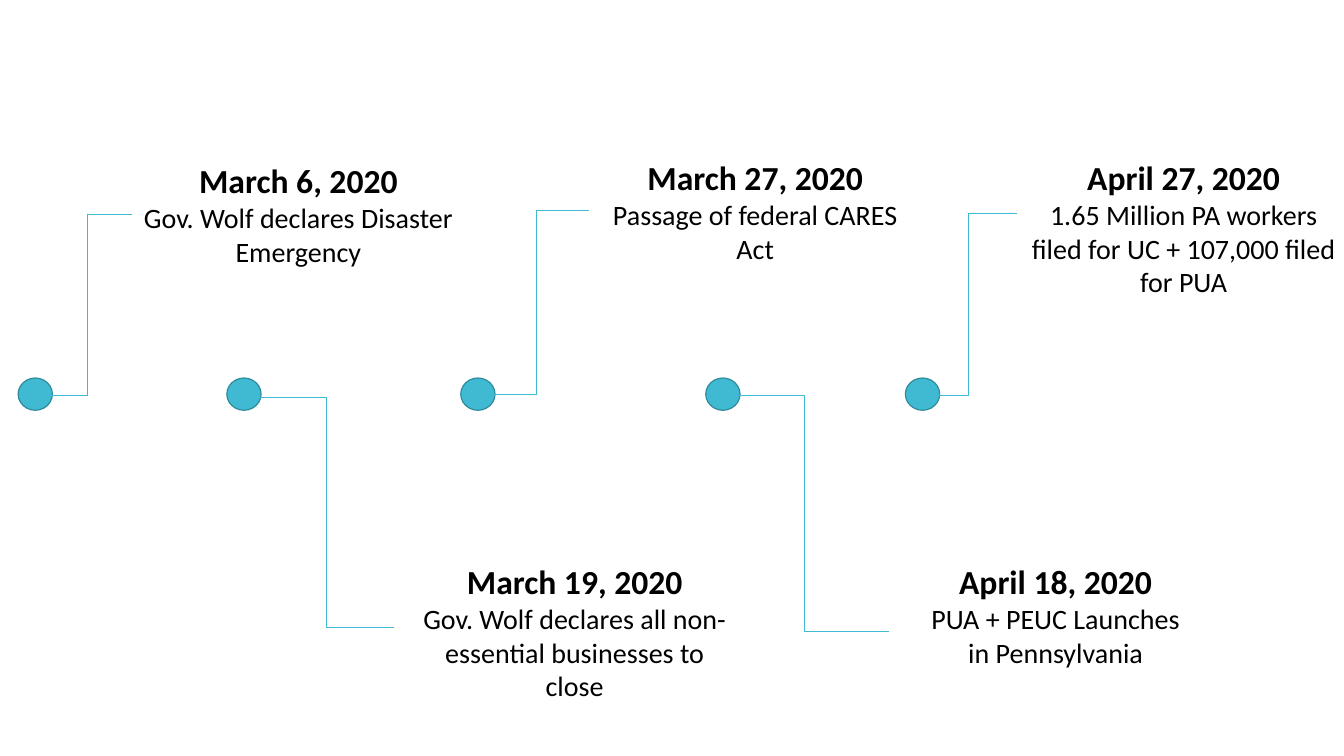
from dataclasses import dataclass

from lxml.etree import SubElement
from pptx import Presentation
from pptx.dml.color import RGBColor
from pptx.enum.shapes import MSO_CONNECTOR, MSO_SHAPE
from pptx.enum.text import MSO_AUTO_SIZE, PP_ALIGN
from pptx.oxml.ns import qn
from pptx.slide import Slide
from pptx.text.text import TextFrame
from pptx.util import Emu, Pt


@dataclass(frozen=True)
class Theme:
    font: str = "Calibri"
    ink: RGBColor = RGBColor(0x00, 0x00, 0x00)
    teal: RGBColor = RGBColor(0x40, 0xBA, 0xD2)
    edge: RGBColor = RGBColor(0x2F, 0x8A, 0x9B)
    date: float = 24
    body: float = 20
    rim: float = 0.85
    rule: float = 0.75


@dataclass(frozen=True)
class Event:
    date: str
    lines: tuple[str, ...]
    box: tuple[int, int, int]  # left, top, height
    dot: int  # left
    start: tuple[int, int]  # line, at the text
    end: tuple[int, int]  # line, at the dot


THEME = Theme()
UNIT = 9144  # EMU in one px, 100 px to the inch
WIDE, HIGH = 1333, 750
BOX_W = 330
DOT_Y, DOT_W, DOT_H = 375, 34, 32

EVENTS = [
    Event("March 6, 2020", ("Gov. Wolf declares Disaster Emergency",),
          (131, 154, 118), 18, (131, 213), (42, 392)),
    Event("March 19, 2020",
          ("Gov. Wolf declares all non-essential businesses to close",),
          (405, 552, 151), 225, (391, 623), (256, 394)),
    Event("March 27, 2020", ("Passage of federal CARES Act",),
          (584, 151, 118), 457, (584, 209), (480, 391)),
    Event("April 18, 2020", ("PUA + PEUC Launches", "in Pennsylvania"),
          (882, 552, 118), 700, (882, 627), (713, 392)),
    Event("April 27, 2020",
          ("1.65 Million PA workers filed for UC + 107,000 filed for PUA",),
          (1009, 151, 151), 898, (1009, 212), (912, 392)),
]


def px(*sizes: int) -> list[Emu]:
    return [Emu(size * UNIT) for size in sizes]


def write(frame: TextFrame, text: str, *, size: float, bold: bool = False,
          first: bool = False) -> None:
    para = frame.paragraphs[0] if first else frame.add_paragraph()
    para.alignment = PP_ALIGN.CENTER
    run = para.add_run()
    run.text = text
    run.font.name = THEME.font
    run.font.size = Pt(size)
    run.font.bold = bold
    run.font.color.rgb = THEME.ink


def add_dot(slide: Slide, event: Event) -> None:
    dot = slide.shapes.add_shape(
        MSO_SHAPE.OVAL, *px(event.dot, DOT_Y, DOT_W, DOT_H))
    dot.name = f"Dot {event.date}"
    dot.shadow.inherit = False
    dot.fill.solid()
    dot.fill.fore_color.rgb = THEME.teal
    dot.line.color.rgb = THEME.edge
    dot.line.width = Pt(THEME.rim)


def add_line(slide: Slide, event: Event) -> None:
    link = slide.shapes.add_connector(
        MSO_CONNECTOR.ELBOW, *px(*event.start, *event.end))
    link.name = f"Line {event.date}"
    link.line.color.rgb = THEME.teal
    link.line.width = Pt(THEME.rule)
    SubElement(link._element.spPr, qn("a:effectLst"))


def add_label(slide: Slide, event: Event) -> None:
    left, top, height = event.box
    box = slide.shapes.add_textbox(*px(left, top, BOX_W, height))
    box.name = f"Label {event.date}"
    frame = box.text_frame
    frame.word_wrap = True
    frame.auto_size = MSO_AUTO_SIZE.SHAPE_TO_FIT_TEXT
    write(frame, event.date, size=THEME.date, bold=True, first=True)
    for line in event.lines:
        write(frame, line, size=THEME.body)


def main() -> None:
    deck = Presentation()
    deck.slide_width, deck.slide_height = px(WIDE, HIGH)
    slide = deck.slides.add_slide(deck.slide_layouts[6])

    # Timeline: dot, bent line and label for each event
    for event in EVENTS:
        add_dot(slide, event)
        add_line(slide, event)
        add_label(slide, event)

    deck.save("out.pptx")


if __name__ == "__main__":
    main()
